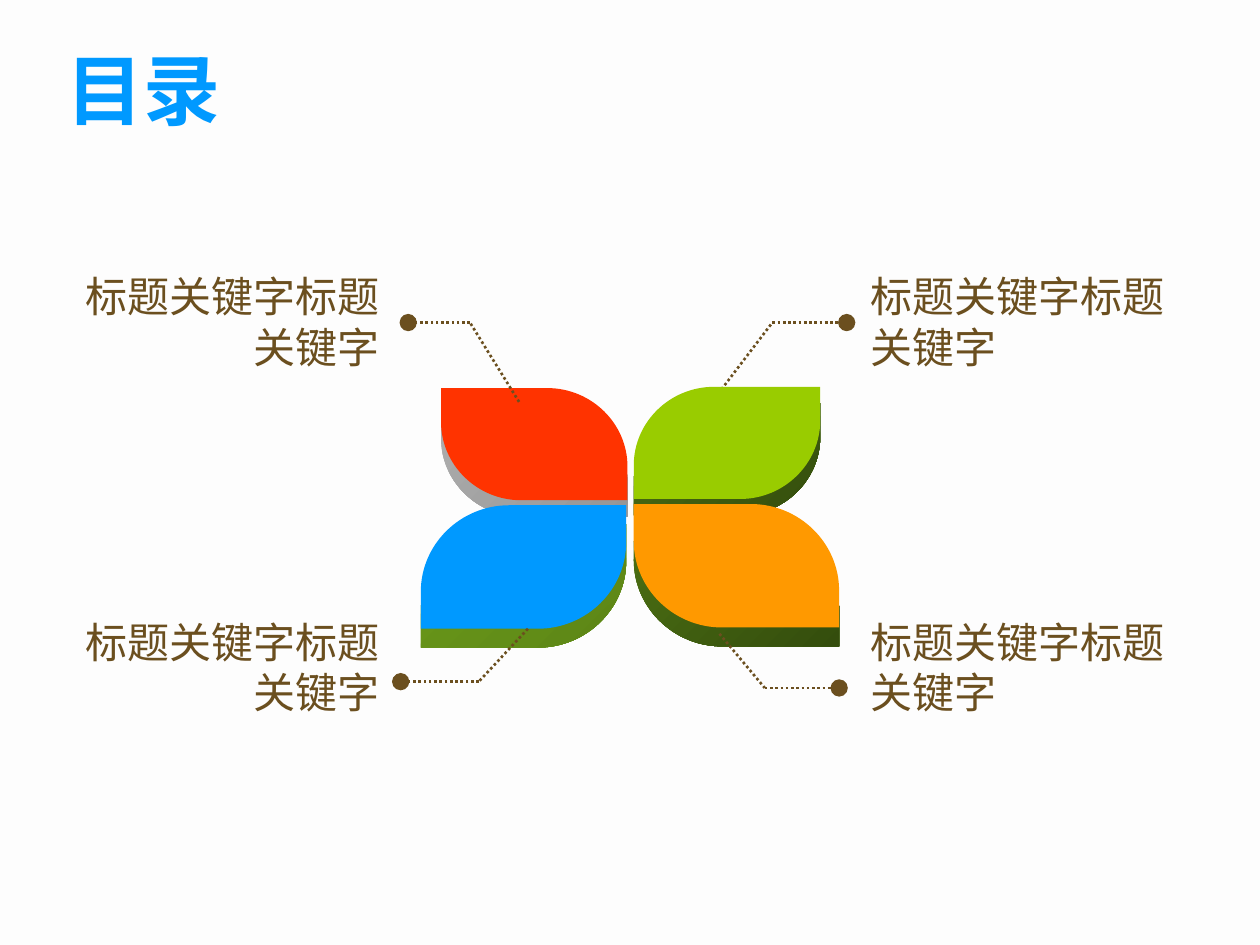
from dataclasses import dataclass

import pptx
import pptx.dml.color
import pptx.enum.dml
import pptx.enum.shapes
import pptx.enum.text
import pptx.oxml.ns
import pptx.util
from lxml import etree

Inches = pptx.util.Inches
Pt = pptx.util.Pt
RGB = pptx.dml.color.RGBColor.from_string
qn = pptx.oxml.ns.qn
ALIGN = pptx.enum.text.PP_ALIGN
Point = tuple[float, float]


@dataclass(frozen=True)
class Theme:
    font: str = "Noto Sans CJK SC"
    background: str = "FDFDFD"
    brown: str = "6B4F1F"
    red: str = "FF3300"
    blue: str = "0099FF"
    green: str = "99CC00"
    orange: str = "FF9900"
    grey_side: tuple[str, str] = ("AEAEAE", "969696")
    light_side: tuple[str, str] = ("6B9B1A", "5C8516")
    dark_side: tuple[str, str] = ("4C7013", "344D0D")
    title_size: float = 44
    label_size: float = 24
    line_height: float = 1.2
    line_width: float = 1.5


@dataclass(frozen=True)
class Leaf:
    left: float
    top: float
    width: float
    height: float
    depth: float
    sharp_top_left: bool
    face: str
    side: tuple[str, str]


@dataclass(frozen=True)
class Leader:
    start: Point
    bend: Point
    dot_x: float


@dataclass(frozen=True)
class Label:
    left: float
    top: float
    align: ALIGN


THEME = Theme()
ARC = 0.55
SMALL = (1.48, 0.89, 0.13)
LARGE = (1.63, 0.98, 0.15)
LEAVES = [
    Leaf(3.5, 3.08, *SMALL, True, THEME.red, THEME.grey_side),
    Leaf(3.34, 4.01, *LARGE, False, THEME.blue, THEME.light_side),
    Leaf(5.03, 3.07, *SMALL, False, THEME.green, THEME.dark_side),
    Leaf(5.03, 4, *LARGE, True, THEME.orange, THEME.dark_side),
]
BACK_LEADER = Leader((5.65, 3.19), (6.13, 2.56), 6.72)
FRONT_LEADERS = [
    Leader((4.12, 3.19), (3.73, 2.56), 3.24),
    Leader((4.19, 4.99), (3.8, 5.41), 3.18),
    Leader((5.71, 5.03), (6.07, 5.46), 6.66),
]
LABELS = [
    Label(0.56, 4.84, ALIGN.RIGHT),
    Label(0.56, 2.1, ALIGN.RIGHT),
    Label(6.81, 2.1, ALIGN.LEFT),
    Label(6.81, 4.84, ALIGN.LEFT),
]


def write_text(shape, text: str, size: float, color: str, align: ALIGN,
               bold: bool = False) -> None:
    tf = shape.text_frame
    tf.word_wrap = True
    tf.vertical_anchor = pptx.enum.text.MSO_ANCHOR.TOP
    tf.auto_size = pptx.enum.text.MSO_AUTO_SIZE.SHAPE_TO_FIT_TEXT
    p = tf.paragraphs[0]
    p.add_run().text = text
    p.alignment = align
    p.line_spacing = Pt(size * THEME.line_height)
    p.font.size = Pt(size)
    p.font.bold = bold
    p.font.color.rgb = RGB(color)
    p.font.name = THEME.font
    props = p._p.pPr.find(qn("a:defRPr"))
    etree.SubElement(props, qn("a:ea")).set("typeface", THEME.font)


def round_corner(segment, start: Point, corner: Point, end: Point) -> None:
    curve = etree.Element(qn("a:cubicBezTo"))
    controls = [
        tuple(a + ARC * (c - a) for a, c in zip(anchor, corner))
        for anchor in (start, end)
    ]
    for x, y in (*controls, end):
        pt = etree.SubElement(curve, qn("a:pt"))
        pt.set("x", str(Inches(x)))
        pt.set("y", str(Inches(y)))
    segment.getparent().replace(segment, curve)


def add_leaf_layer(s, leaf: Leaf, top: float):
    w, h = leaf.width, leaf.height
    rx, ry = 0.43 * w, 0.7 * h

    def place(x: float, y: float) -> Point:
        return (x if leaf.sharp_top_left else w - x, y)

    points = [place(x, y) for x, y in (
        (0, 0), (w - rx, 0), (w, ry), (w, h), (rx, h), (0, h - ry))]
    corners = {1: place(w, 0), 4: place(0, h)}
    outline = [(Inches(leaf.left + x), Inches(top + y)) for x, y in points]
    builder = s.shapes.build_freeform(*outline[0])
    builder.add_line_segments(outline[1:], close=True)
    sp = builder.convert_to_shape()
    segments = list(sp._element.iter(qn("a:lnTo")))
    for i, corner in corners.items():
        round_corner(segments[i], points[i], corner, points[i + 1])
    sp.shadow.inherit = False
    sp.line.fill.background()
    return sp


def add_leaf(s, leaf: Leaf) -> None:
    fill = add_leaf_layer(s, leaf, leaf.top + leaf.depth).fill
    fill.gradient()
    fill.gradient_angle = 315
    for stop, color, position in zip(fill.gradient_stops, leaf.side, (0, 1)):
        stop.color.rgb = RGB(color)
        stop.position = position
    fill = add_leaf_layer(s, leaf, leaf.top).fill
    fill.solid()
    fill.fore_color.rgb = RGB(leaf.face)


def add_dotted_line(s, start: Point, end: Point, dot: bool = False) -> None:
    line = s.shapes.add_connector(
        pptx.enum.shapes.MSO_CONNECTOR.STRAIGHT,
        *(Inches(v) for v in (*start, *end)))
    line.line.width = Pt(THEME.line_width)
    line.line.color.rgb = RGB(THEME.brown)
    line.line.dash_style = pptx.enum.dml.MSO_LINE.ROUND_DOT
    props = line._element.spPr
    if dot:
        tail = etree.SubElement(props.find(qn("a:ln")), qn("a:tailEnd"))
        for key, value in (("type", "oval"), ("w", "lg"), ("len", "lg")):
            tail.set(key, value)
    etree.SubElement(props, qn("a:effectLst"))


def add_leader(s, leader: Leader) -> None:
    add_dotted_line(s, leader.start, leader.bend)
    add_dotted_line(s, leader.bend, (leader.dot_x, leader.bend[1]), dot=True)


def add_label(s, label: Label) -> None:
    box = s.shapes.add_textbox(
        Inches(label.left), Inches(label.top), Inches(2.55), Inches(1.31))
    write_text(box, "标题关键字标题关键字", THEME.label_size, THEME.brown, label.align)


def add_title(s) -> None:
    title = s.shapes.title
    title.left, title.top = Inches(0.43), Inches(0.29)
    title.width, title.height = Inches(3.78), Inches(0.84)
    write_text(title, "目录", THEME.title_size, THEME.blue, ALIGN.LEFT, bold=True)


def main() -> None:
    prs = pptx.Presentation()
    prs.slide_width, prs.slide_height = Inches(10), Inches(7.5)
    s = prs.slides.add_slide(prs.slide_layouts[5])
    s.background.fill.solid()
    s.background.fill.fore_color.rgb = RGB(THEME.background)
    add_title(s)
    add_leader(s, BACK_LEADER)
    for leaf in LEAVES:
        add_leaf(s, leaf)
    for label in LABELS:
        add_label(s, label)
    for leader in FRONT_LEADERS:
        add_leader(s, leader)
    prs.save("out.pptx")


if __name__ == "__main__":
    main()
